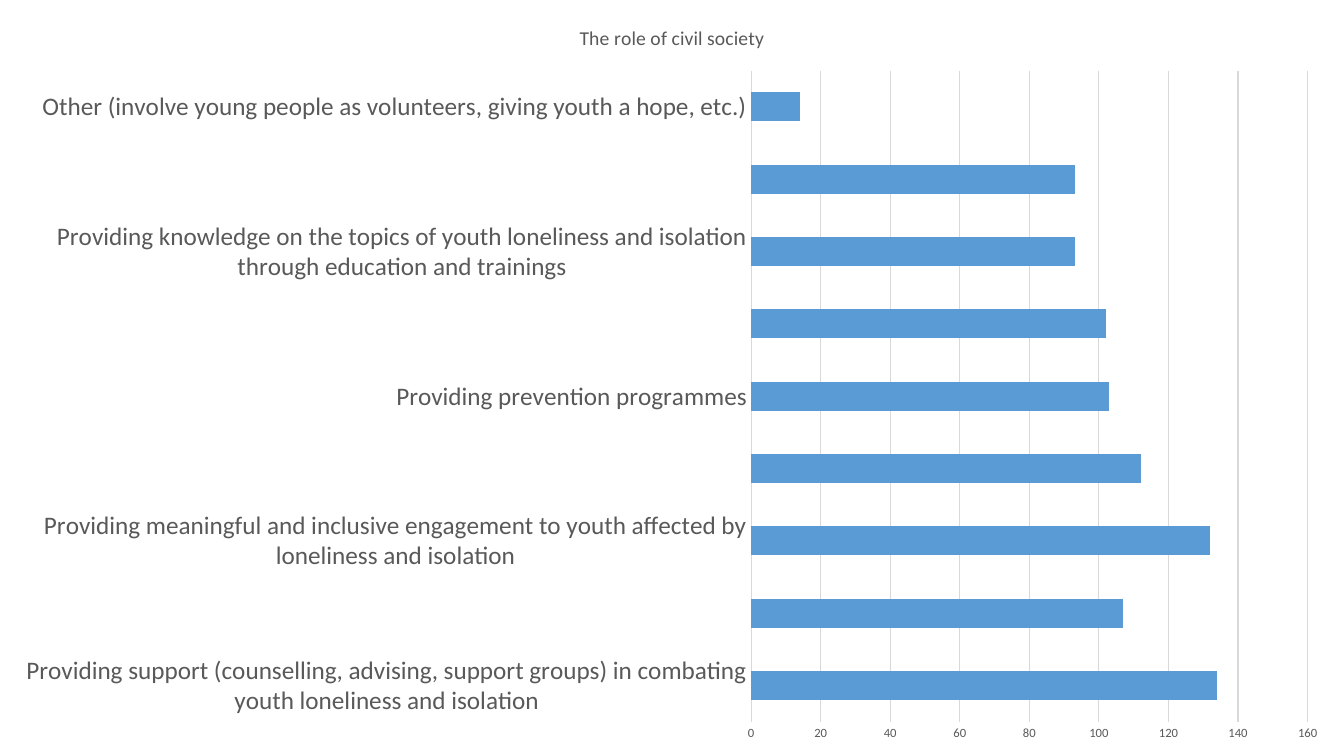
from lxml import etree
from pptx import Presentation
from pptx.chart.data import CategoryChartData
from pptx.dml.color import RGBColor
from pptx.enum.chart import XL_CHART_TYPE, XL_TICK_MARK
from pptx.oxml.ns import qn
from pptx.util import Inches, Pt

BAR_STACKED = XL_CHART_TYPE.BAR_STACKED
NO_TICKS = XL_TICK_MARK.NONE

BLUE = RGBColor(0x5B, 0x9B, 0xD5)
DARK_GRAY = RGBColor(0x59, 0x59, 0x59)
LIGHT_GRAY = RGBColor(0xD9, 0xD9, 0xD9)
BLACK = RGBColor(0, 0, 0)

WIDTH, HEIGHT = 13.33, 7.5
BLANK_LAYOUT = 6

# Answers from the bottom bar to the top one; every second bar is unlabelled
ROLES = [
    ("Providing support (counselling, advising, support groups) in combating "
     "youth loneliness and isolation", 134),
    ("", 107),
    ("Providing meaningful and inclusive engagement to youth affected by "
     "loneliness and isolation", 132),
    ("", 112),
    ("Providing prevention programmes", 103),
    ("", 102),
    ("Providing knowledge on the topics of youth loneliness and isolation "
     "through education and trainings", 93),
    ("", 93),
    ("Other (involve young people as volunteers, giving youth a hope, etc.)", 14),
]


class ChartPage:
    """Holds the text style and the current slide."""

    font_name = "Calibri"

    def __init__(self, deck):
        self.page = deck.slides.add_slide(deck.slide_layouts[BLANK_LAYOUT])

    def style_font(self, font, size, color=DARK_GRAY):
        font.name = self.font_name
        font.size = Pt(size)
        font.bold = False
        font.color.rgb = color

    def add_bars(self, rows, left, top, width, height):
        data = CategoryChartData()
        data.categories = [label for label, count in rows]
        data.add_series("Series 1", [count for label, count in rows])
        chart = self.page.shapes.add_chart(
            BAR_STACKED, Inches(left), Inches(top),
            Inches(width), Inches(height), data).chart
        self.style_font(chart.font, 10, BLACK)
        chart.has_legend = False
        plot = chart.plots[0]
        plot.gap_width = 150
        plot.overlap = 100
        plot.vary_by_categories = False
        fill = plot.series[0].format.fill
        fill.solid()
        fill.fore_color.rgb = BLUE
        return chart

    def set_title(self, chart, text, size):
        chart.has_title = True
        frame = chart.chart_title.text_frame
        frame.text = text
        self.style_font(frame.paragraphs[0].runs[0].font, size)
        chart.chart_title.include_in_layout = False

    def style_axis(self, axis, size):
        axis.major_tick_mark = NO_TICKS
        axis.minor_tick_mark = NO_TICKS
        axis.format.line.fill.background()
        self.style_font(axis.tick_labels.font, size)

    def style_gridlines(self, axis):
        axis.has_major_gridlines = True
        line = axis.major_gridlines.format.line
        line.color.rgb = LIGHT_GRAY
        line.width = Pt(0.75)

    def place_plot(self, chart, left, top, width, height):
        """Fix the inner plot area of a full-page chart, in inches."""
        plot_area = chart.plots[0]._element.getparent()
        for old in plot_area.findall(qn("c:layout")):
            plot_area.remove(old)
        layout = etree.Element(qn("c:layout"))
        plot_area.insert(0, layout)
        manual = etree.SubElement(layout, qn("c:manualLayout"))
        settings = {"layoutTarget": "inner", "xMode": "edge", "yMode": "edge",
                    "x": left / WIDTH, "y": top / HEIGHT,
                    "w": width / WIDTH, "h": height / HEIGHT}
        for name, value in settings.items():
            etree.SubElement(manual, qn("c:" + name)).set("val", str(value))


def main():
    deck = Presentation()
    deck.slide_width, deck.slide_height = Inches(WIDTH), Inches(HEIGHT)
    slide = ChartPage(deck)

    # Full-page bar chart
    chart = slide.add_bars(ROLES, 0, 0, WIDTH, HEIGHT)
    slide.set_title(chart, "The role of civil society", 14)

    # Axes and gridlines
    slide.style_axis(chart.category_axis, 18)
    slide.style_axis(chart.value_axis, 9)
    slide.style_gridlines(chart.value_axis)
    chart.value_axis.minimum_scale = 0
    chart.value_axis.maximum_scale = 160
    chart.value_axis.major_unit = 20
    slide.place_plot(chart, 7.45, 0.7, 5.52, 6.46)

    deck.save("out.pptx")


if __name__ == "__main__":
    main()
